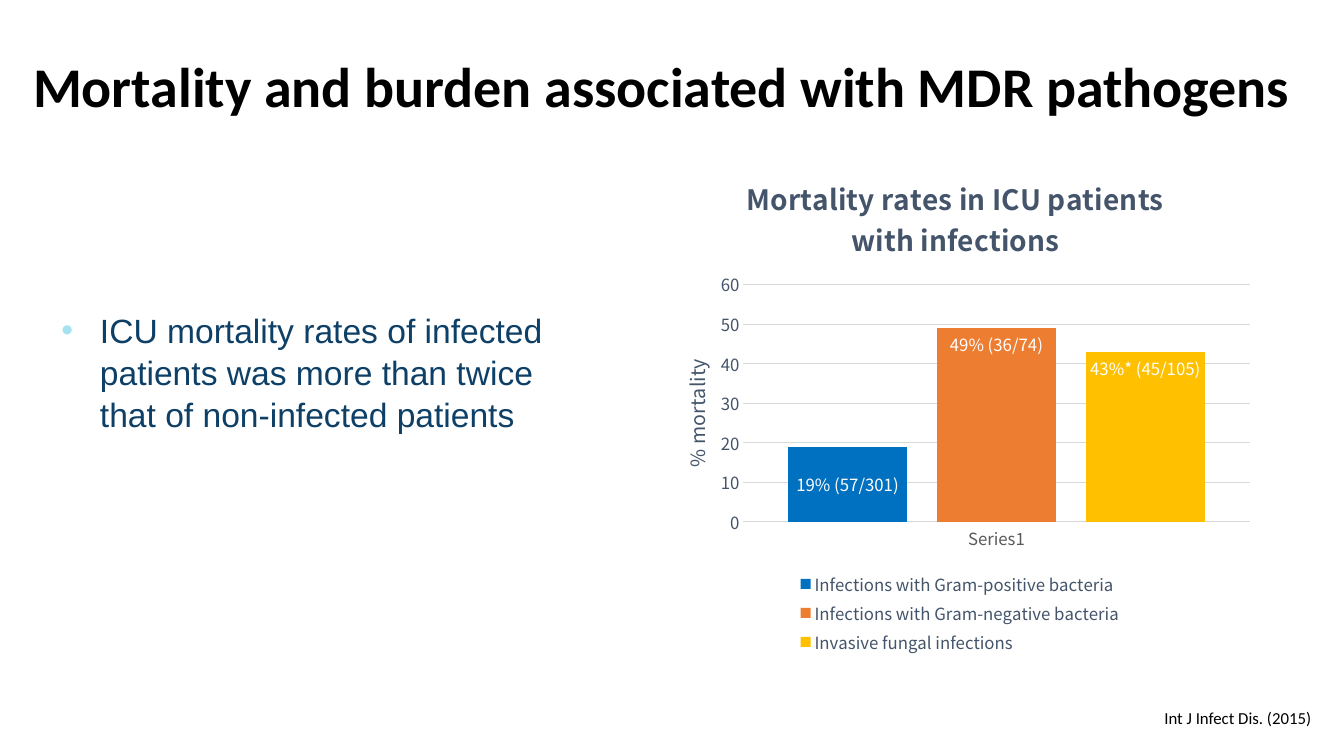
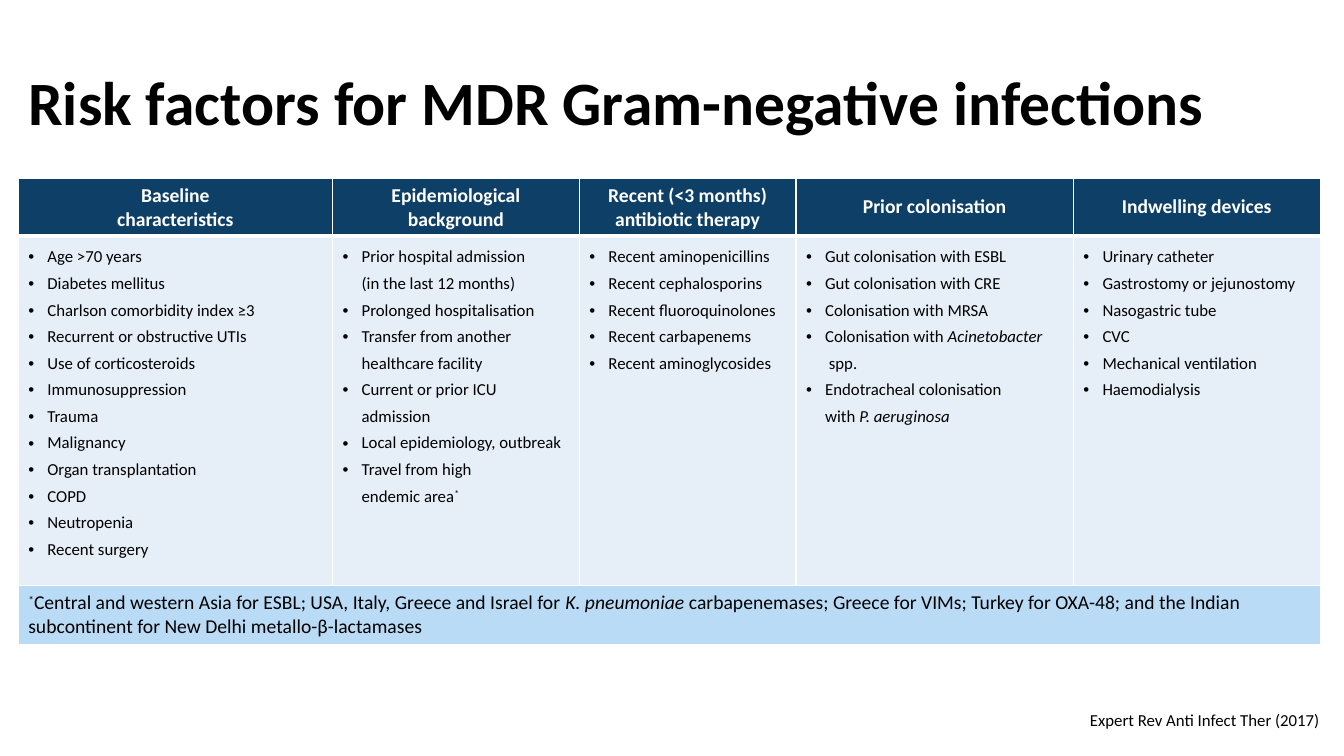
from lxml import etree
from pptx import Presentation
from pptx.chart.data import CategoryChartData
from pptx.dml.color import RGBColor
from pptx.enum import chart as ch, text as tx
from pptx.oxml.ns import qn
from pptx.util import Cm, Pt

NAVY = RGBColor(0x0E, 0x40, 0x67)
SKY = RGBColor(0xA4, 0xE2, 0xF2)
PALE = RGBColor(0xE6, 0xEF, 0xF8)
LIGHT = RGBColor(0xBA, 0xDB, 0xF6)
SLATE = RGBColor(0x44, 0x54, 0x6A)
GREY = RGBColor(0x59, 0x59, 0x59)
RULE = RGBColor(0xD9, 0xD9, 0xD9)
BLACK = RGBColor(0, 0, 0)
WHITE = RGBColor(255, 255, 255)
BLUE = RGBColor(0x00, 0x70, 0xC0)
ORANGE = RGBColor(0xED, 0x7D, 0x31)
GOLD = RGBColor(0xFF, 0xC0, 0x00)

SANS = "Calibri"
NOTO = "Noto Sans CJK KR"

POINT = ("ICU mortality rates of infected patients was more than twice "
         "that of non-infected patients")
INSIDE, MIDDLE = ch.XL_LABEL_POSITION.INSIDE_END, ch.XL_LABEL_POSITION.CENTER
SERIES = [
    ("Infections with Gram-positive bacteria", 19, "19% (57/301)", BLUE, MIDDLE),
    ("Infections with Gram-negative bacteria", 49, "49% (36/74)", ORANGE, INSIDE),
    ("Invasive fungal infections", 43, "43%* (45/105)", GOLD, INSIDE),
]

# A line is a string, or a list of (text, style) runs.
RISKS = [
    (7.92, "Baseline\ncharacteristics", [
        "Age >70 years", "Diabetes mellitus", "Charlson comorbidity index ≥3",
        "Recurrent or obstructive UTIs", "Use of corticosteroids",
        "Immunosuppression", "Trauma", "Malignancy", "Organ transplantation",
        "COPD", "Neutropenia", "Recent surgery"]),
    (6.22, "Epidemiological\nbackground", [
        "Prior hospital admission\n(in the last 12 months)",
        "Prolonged hospitalisation",
        "Transfer from another\nhealthcare facility",
        "Current or prior ICU admission", "Local epidemiology, outbreak",
        [("Travel from high\nendemic area", ""), ("*", "sup")]]),
    (5.46, "Recent (<3 months)\nantibiotic therapy", [
        "Recent aminopenicillins", "Recent cephalosporins",
        "Recent fluoroquinolones", "Recent carbapenems",
        "Recent aminoglycosides"]),
    (6.99, "Prior colonisation", [
        "Gut colonisation with ESBL", "Gut colonisation with CRE",
        "Colonisation with MRSA",
        [("Colonisation with ", ""), ("Acinetobacter", "italic"), ("\n spp.", "")],
        [("Endotracheal colonisation\nwith ", ""), ("P. aeruginosa", "italic")]]),
    (6.22, "Indwelling devices", [
        "Urinary catheter", "Gastrostomy or jejunostomy", "Nasogastric tube",
        "CVC", "Mechanical ventilation", "Haemodialysis"]),
]
NOTE = [
    ("*", "sup"),
    ("Central and western Asia for ESBL; USA, Italy, Greece and Israel for ", ""),
    ("K. pneumoniae", "italic"),
    (" carbapenemases; Greece for VIMs; Turkey for OXA-48; and the Indian\n"
     "subcontinent for New Delhi metallo-β-lactamases", ""),
]
ROWS = (1.42, 8.81, 1.45)


def style(font, size, color, name=SANS, bold=False):
    look = {"size": Pt(size), "name": name, "bold": bold}
    for key, value in look.items():
        setattr(font, key, value)
    font.color.rgb = color


def write(par, line, *look, **more):
    """Fill a paragraph with styled runs; a newline is a line break."""
    runs = [(line, "")] if isinstance(line, str) else line
    for words, kind in runs:
        for i, part in enumerate(words.split("\n")):
            if i:
                par.add_line_break()
            if not part:
                continue
            run = par.add_run()
            run.text = part
            style(run.font, *look, **more)
            if kind == "italic":
                run.font.italic = True
            elif kind == "sup":
                run.font._element.set("baseline", "30000")


def bullet(par, indent, color=None):
    props = par._p.get_or_add_pPr()
    props.set("marL", str(Cm(indent)))
    props.set("indent", str(-Cm(indent)))
    if color is not None:
        tint = etree.SubElement(props, qn("a:buClr"))
        etree.SubElement(tint, qn("a:srgbClr"), val=str(color))
    etree.SubElement(props, qn("a:buFont"), typeface="Arial")
    etree.SubElement(props, qn("a:buChar"), char="•")


def start(deck, title, size, box, source, spot):
    """Add a slide with its title and its source line."""
    slide = deck.slides.add_slide(deck.slide_layouts[5])
    head = slide.shapes.title
    head.left, head.top, head.width, head.height = map(Cm, box)
    frame = head.text_frame
    frame.auto_size = tx.MSO_AUTO_SIZE.NONE
    frame.vertical_anchor = tx.MSO_ANCHOR.MIDDLE
    par = frame.paragraphs[0]
    par.alignment, par.line_spacing = tx.PP_ALIGN.LEFT, 0.9
    write(par, title, size, BLACK, bold=True)

    foot = slide.shapes.add_textbox(*map(Cm, spot)).text_frame
    foot.word_wrap = False
    foot.paragraphs[0].alignment = tx.PP_ALIGN.RIGHT
    write(foot.paragraphs[0], source, 12, BLACK)
    return slide


def place(part, index, x, y, w=None, h=None, inner=False):
    """Give a chart part a fixed place, in fractions of the chart."""
    for old in part.findall(qn("c:layout")):
        part.remove(old)
    layout = etree.Element(qn("c:layout"))
    manual = etree.SubElement(layout, qn("c:manualLayout"))
    marks = [("layoutTarget", "inner")] if inner else []
    marks += [("xMode", "edge"), ("yMode", "edge"),
              ("x", x), ("y", y), ("w", w), ("h", h)]
    for tag, value in marks:
        if value is not None:
            etree.SubElement(manual, qn("c:" + tag), val=str(value))
    part.insert(index, layout)


def caption(title, lines, size, bold, x, y):
    frame = title.text_frame
    for i, line in enumerate(lines):
        par = frame.add_paragraph() if i else frame.paragraphs[0]
        write(par, line, size, SLATE, name=NOTO, bold=bold)
    place(title._element, 1, x, y)
    return frame


def plot(slide):
    data = CategoryChartData()
    data.categories = ["Series1"]
    for name, value, *_ in SERIES:
        data.add_series(name, [value])
    chart = slide.shapes.add_chart(
        ch.XL_CHART_TYPE.COLUMN_CLUSTERED,
        *map(Cm, (16.43, 3.86, 15.37, 12.73)), data).chart
    style(chart.font, 12, SLATE, NOTO)

    chart.has_title = True
    caption(chart.chart_title, ("Mortality rates in ICU patients", "with infections"),
            20, True, 0.15, 0.04)
    chart.chart_title.include_in_layout = False

    chart.has_legend = True
    legend = chart.legend
    legend.position = ch.XL_LEGEND_POSITION.BOTTOM
    legend.include_in_layout = False
    style(legend.font, 12, SLATE, NOTO)
    place(legend._element, 1, 0.23, 0.82, 0.55, 0.19)

    side, base = chart.value_axis, chart.category_axis
    for axis, color in ((side, SLATE), (base, GREY)):
        axis.major_tick_mark = axis.minor_tick_mark = ch.XL_TICK_MARK.NONE
        style(axis.tick_labels.font, 12, color, NOTO)
    side.minimum_scale, side.maximum_scale, side.major_unit = 0, 60, 10
    side.format.line.fill.background()
    for line in (side.major_gridlines.format.line, base.format.line):
        line.color.rgb, line.width = RULE, Pt(0.75)
    frame = caption(side.axis_title, ["% mortality"], 14, False, 0.04, 0.4)
    frame._txBody.bodyPr.set("rot", "-5400000")
    frame._txBody.bodyPr.set("vert", "horz")

    bars = chart.plots[0]
    bars.gap_width, bars.overlap, bars.vary_by_categories = 75, -25, False
    for series, (_, _, label, color, spot) in zip(bars.series, SERIES):
        series.format.fill.solid()
        series.format.fill.fore_color.rgb = color
        tag = series.points[0].data_label
        write(tag.text_frame.paragraphs[0], label, 12, WHITE, name=NOTO)
        tag.position = spot
    area = chart._chartSpace.find(".//" + qn("c:plotArea"))
    place(area, 0, 0.15, 0.26, 0.83, 0.47, inner=True)


def dress(cell, color, top=1, bottom=1):
    """Give a cell white borders and a plain fill."""
    props = cell._tc.get_or_add_tcPr()
    for edge, width in (("L", 1), ("R", 1), ("T", top), ("B", bottom)):
        line = etree.SubElement(props, qn("a:ln" + edge), w=str(Pt(width)))
        fill = etree.SubElement(line, qn("a:solidFill"))
        etree.SubElement(fill, qn("a:srgbClr"), val=str(WHITE))
    cell.fill.solid()
    cell.fill.fore_color.rgb = color


def grid(slide):
    widths = [width for width, *_ in RISKS]
    table = slide.shapes.add_table(
        len(ROWS), len(RISKS),
        *map(Cm, (0.46, 4.5, sum(widths), sum(ROWS)))).table
    for row, height in zip(table.rows, ROWS):
        row.height = Cm(height)
    for i, (width, head, lines) in enumerate(RISKS):
        table.columns[i].width = Cm(width)
        cell = table.cell(0, i)
        dress(cell, NAVY, bottom=3)
        cell.vertical_anchor = tx.MSO_ANCHOR.MIDDLE
        par = cell.text_frame.paragraphs[0]
        par.alignment = tx.PP_ALIGN.CENTER
        write(par, head, 14, WHITE, bold=True)

        cell = table.cell(1, i)
        dress(cell, PALE, top=3)
        frame = cell.text_frame
        for j, line in enumerate(lines):
            par = frame.add_paragraph() if j else frame.paragraphs[0]
            bullet(par, 0.48)
            par.line_spacing = 1.3
            write(par, line, 12, BLACK)
        dress(table.cell(2, i), LIGHT)
    note = table.cell(2, 0)
    note.merge(table.cell(2, len(RISKS) - 1))
    note.margin_top = note.margin_bottom = Cm(0.15)
    write(note.text_frame.paragraphs[0], NOTE, 14, BLACK)


def main():
    deck = Presentation()
    deck.slide_width, deck.slide_height = Cm(33.87), Cm(19.05)

    slide = start(deck, "Mortality and burden associated with MDR pathogens", 40,
                  (0.58, 0.41, 32.72, 3.68),
                  "Int J Infect Dis. (2015)", (29.03, 17.7, 4.27, 0.76))
    frame = slide.shapes.add_textbox(*map(Cm, (1.55, 7.75, 13.06, 6.02))).text_frame
    frame.word_wrap = True
    for side in ("left", "right", "top", "bottom"):
        setattr(frame, "margin_" + side, 0)
    par = frame.paragraphs[0]
    bullet(par, 0.97, SKY)
    par.line_spacing = 1.05
    write(par, POINT, 24, NAVY, name="Arial")
    plot(slide)

    slide = start(deck, "Risk factors for MDR Gram-negative infections", 44,
                  (0.46, 0.81, 30.4, 3.68),
                  "Expert Rev Anti Infect Ther (2017)", (27.03, 17.75, 6.48, 0.76))
    grid(slide)
    deck.save("out.pptx")


if __name__ == "__main__":
    main()
